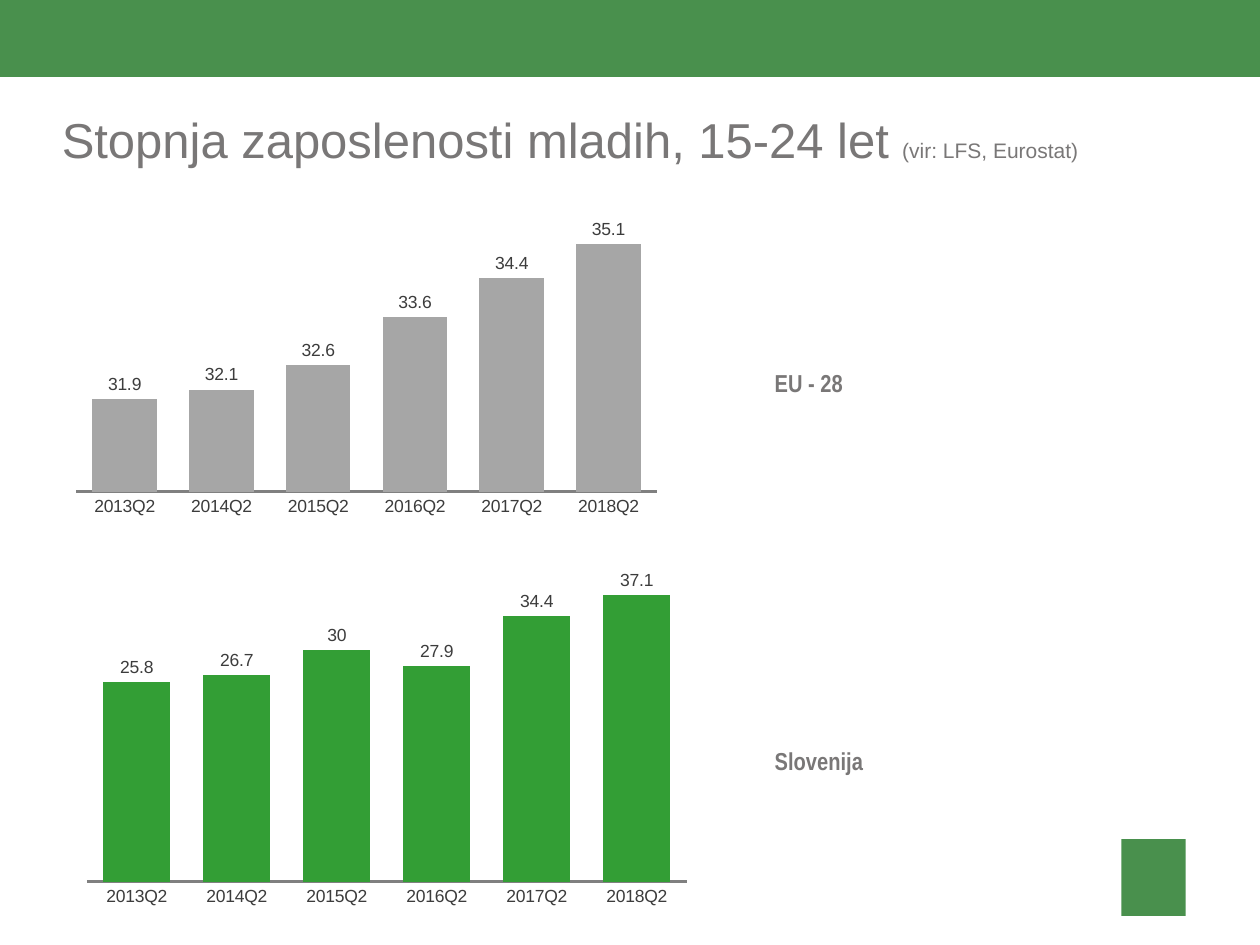
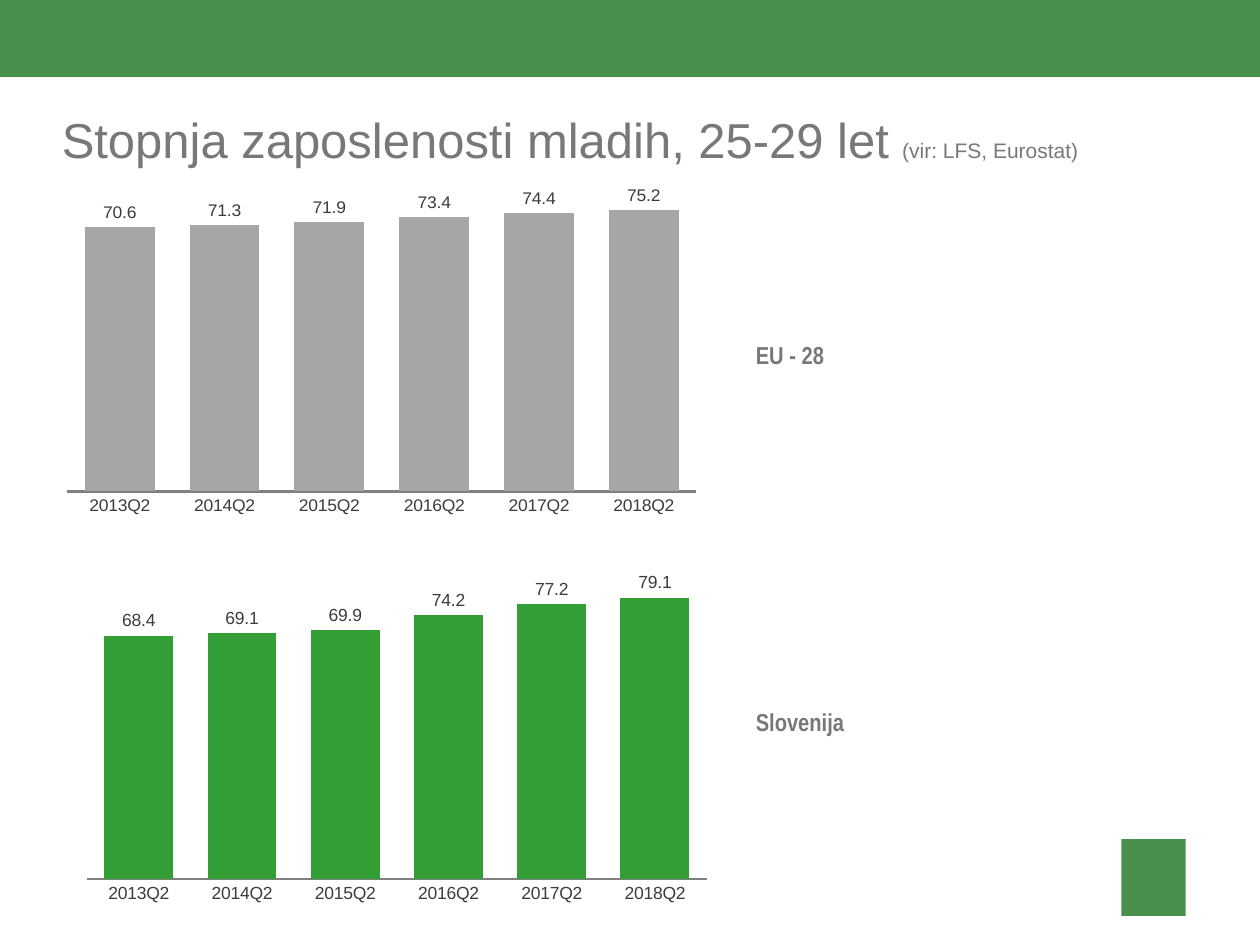
import pptx
import pptx.chart.data
import pptx.dml.color
import pptx.enum.chart
import pptx.enum.shapes
import pptx.enum.text
import pptx.util

COLOURS = {
    "band": "49904D",
    "text": "797777",
    "figures": "3C3C3C",
    "axis": "808080",
    "eu": "A6A6A6",
    "slovenia": "339E35",
}
QUARTERS = [f"{year}Q2" for year in range(2013, 2019)]

SLIDES = [
    {
        "ages": "15-24",
        "label_column": 60.5,
        "regions": [
            {"name": "EU - 28", "colour": "eu", "label_row": 28.7,
             "area": (5.1, 15.4, 48, 26.1), "scale": (30, 36),
             "rates": [31.9, 32.1, 32.6, 33.6, 34.4, 35.1]},
            {"name": "Slovenija", "colour": "slovenia", "label_row": 58.7,
             "area": (5.9, 44.9, 49.6, 27.6), "scale": (0, 40),
             "rates": [25.8, 26.7, 30, 27.9, 34.4, 37.1]},
        ],
    },
    {
        "ages": "25-29",
        "label_column": 59,
        "regions": [
            {"name": "EU - 28", "colour": "eu", "label_row": 26.5,
             "area": (4.3, 14.8, 52, 26.6), "scale": (0, 76),
             "rates": [70.6, 71.3, 71.9, 73.4, 74.4, 75.2]},
            {"name": "Slovenija", "colour": "slovenia", "label_row": 55.6,
             "area": (5.9, 43.8, 51.2, 28.5), "scale": (0, 90),
             "rates": [68.4, 69.1, 69.9, 74.2, 77.2, 79.1]},
        ],
    },
]

deck = pptx.Presentation()
deck.slide_width = pptx.util.Inches(10)
deck.slide_height = pptx.util.Inches(7.5)
COLUMN = deck.slide_width / 100
ROW = deck.slide_height / 75


def on_grid(column, row, columns, rows):
    return [int(column * COLUMN), int(row * ROW), int(columns * COLUMN), int(rows * ROW)]


def write(paragraph, text, size=14, face="Arial", bold=False, colour="text"):
    run = paragraph.add_run()
    run.text = text
    run.font.size = pptx.util.Pt(size)
    run.font.name = face
    run.font.bold = bold
    run.font.color.rgb = pptx.dml.color.RGBColor.from_string(COLOURS[colour])


for content in SLIDES:
    slide = deck.slides.add_slide(deck.slide_layouts[5])

    for area in [(0, -0.1, 100, 6.2), (89, 66.6, 5.1, 6.1)]:
        green = slide.shapes.add_shape(pptx.enum.shapes.MSO_SHAPE.RECTANGLE, *on_grid(*area))
        green.shadow.inherit = False
        green.fill.solid()
        green.fill.fore_color.rgb = pptx.dml.color.RGBColor.from_string(COLOURS["band"])
        green.line.fill.background()

    heading = slide.shapes.title
    heading.left, heading.top, heading.width, heading.height = on_grid(4.9, 8.2, 92.6, 7.1)
    frame = heading.text_frame
    frame.margin_left = frame.margin_right = frame.margin_bottom = 0
    frame.margin_top = pptx.util.Inches(0.05)
    frame.vertical_anchor = pptx.enum.text.MSO_ANCHOR.TOP
    frame.auto_size = pptx.enum.text.MSO_AUTO_SIZE.NONE
    frame.paragraphs[0].alignment = pptx.enum.text.PP_ALIGN.LEFT
    write(frame.paragraphs[0], f"Stopnja zaposlenosti mladih, {content['ages']} let ", size=28)
    write(frame.paragraphs[0], "(vir: LFS, Eurostat)", size=12)

    for region in content["regions"]:
        label = slide.shapes.add_textbox(
            *on_grid(content["label_column"], region["label_row"], 16.9, 3.4))
        label.text_frame.word_wrap = True
        write(label.text_frame.paragraphs[0], region["name"], face="Arial Narrow", bold=True)

        rates = pptx.chart.data.CategoryChartData()
        rates.categories = QUARTERS
        rates.add_series("Series 1", region["rates"])
        chart = slide.shapes.add_chart(
            pptx.enum.chart.XL_CHART_TYPE.COLUMN_CLUSTERED,
            *on_grid(*region["area"]), rates).chart
        chart.has_title = False
        chart.has_legend = False
        chart.font.size = pptx.util.Pt(10)
        chart.font.name = "Arial"
        chart.font.color.rgb = pptx.dml.color.RGBColor.from_string(COLOURS["text"])

        quarters = chart.category_axis
        quarters.major_tick_mark = pptx.enum.chart.XL_TICK_MARK.NONE
        quarters.format.line.color.rgb = pptx.dml.color.RGBColor.from_string(COLOURS["axis"])
        quarters.format.line.width = pptx.util.Pt(1.5)

        percent = chart.value_axis
        percent.minimum_scale, percent.maximum_scale = region["scale"]
        percent.has_major_gridlines = False
        percent.major_tick_mark = pptx.enum.chart.XL_TICK_MARK.NONE
        percent.tick_label_position = pptx.enum.chart.XL_TICK_LABEL_POSITION.NONE
        percent.format.line.fill.background()

        plot = chart.plots[0]
        plot.gap_width = 50
        plot.vary_by_categories = False
        bars = plot.series[0].format
        bars.fill.solid()
        bars.fill.fore_color.rgb = pptx.dml.color.RGBColor.from_string(COLOURS[region["colour"]])
        plot.has_data_labels = True
        figures = plot.data_labels
        figures.show_value = True
        figures.number_format = "General"
        figures.number_format_is_linked = False
        figures.position = pptx.enum.chart.XL_LABEL_POSITION.OUTSIDE_END
        for font in (figures.font, quarters.tick_labels.font):
            font.size = pptx.util.Pt(10)
            font.name = "Arial"
            font.color.rgb = pptx.dml.color.RGBColor.from_string(COLOURS["figures"])

deck.save("out.pptx")
